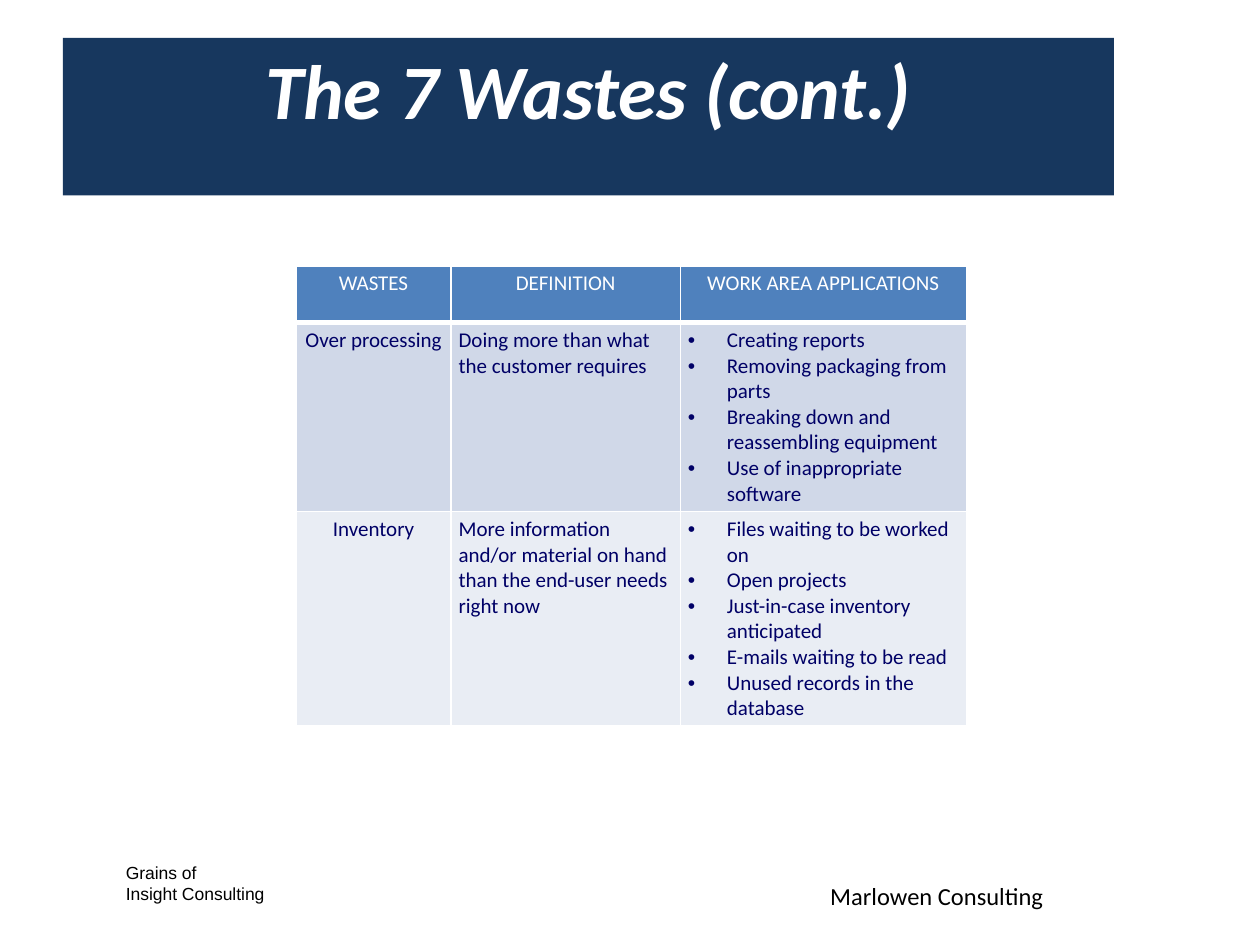
"""Build the slide on the seven wastes, with a banner, a table and two footers."""
from lxml import etree
from pptx import Presentation
from pptx import util as u
from pptx.dml.color import RGBColor
from pptx.enum import shapes, text
from pptx.oxml.ns import qn


def color(value):
    return RGBColor.from_string(value)


def write(frame, content, size=12, font="Calibri", ink="000000", bold=False,
          italic=False, align=text.PP_ALIGN.LEFT, bullet=False):
    frame.word_wrap = True
    for index, line in enumerate(content.split("\n")):
        para = frame.paragraphs[0] if index == 0 else frame.add_paragraph()
        para.alignment = align
        if bullet:
            properties = para._p.get_or_add_pPr()
            properties.set("marL", str(u.Inches(0.31)))
            properties.set("indent", str(u.Inches(-0.31)))
            etree.SubElement(properties, qn("a:buFont"), typeface="Arial")
            etree.SubElement(properties, qn("a:buChar"), char="•")
        span = para.add_run()
        span.text = line
        span.font.size = u.Pt(size)
        span.font.name = font
        span.font.bold = bold
        span.font.italic = italic
        span.font.color.rgb = color(ink)


deck = Presentation()
deck.slide_width, deck.slide_height = u.Inches(10), u.Inches(7.5)
page = deck.slides.add_slide(deck.slide_layouts[6])

footers = [
    ("Grains of\nInsight Consulting", 0.9, 6.79, 2.35, 0.44, 10, "Arial"),
    ("Marlowen Consulting", 6.49, 6.94, 2.92, 0.23, 14, "Calibri"),
]
for content, left, top, width, height, size, font in footers:
    box = page.shapes.add_textbox(
        u.Inches(left), u.Inches(top), u.Inches(width), u.Inches(height))
    write(box.text_frame, content, size=size, font=font)

banner = page.shapes.add_shape(
    shapes.MSO_SHAPE.RECTANGLE,
    u.Inches(0.5), u.Inches(0.3), u.Inches(8.34), u.Inches(1.25))
banner.shadow.inherit = False
banner.fill.solid()
banner.fill.fore_color.rgb = color("17375E")
banner.line.fill.background()
title = banner.text_frame
title.vertical_anchor = text.MSO_ANCHOR.TOP
title.margin_left = title.margin_right = u.Inches(0.07)
title.margin_top = title.margin_bottom = u.Inches(0.04)
write(title, "The 7 Wastes (cont.)", size=44, ink="FFFFFF", bold=True,
      italic=True, align=text.PP_ALIGN.CENTER)

wastes = [
    ("WASTES", "DEFINITION", "WORK AREA APPLICATIONS"),
    ("Over processing",
     "Doing more than what the customer requires",
     "Creating reports\nRemoving packaging from parts\n"
     "Breaking down and reassembling equipment\nUse of inappropriate software"),
    ("Inventory",
     "More information and/or material on hand than the end-user needs right now",
     "Files waiting to be worked on\nOpen projects\n"
     "Just-in-case inventory anticipated\nE-mails waiting to be read\n"
     "Unused records in the database"),
]
row_heights = [0.45, 1.5, 1.7]
column_widths = [1.23, 1.82, 2.27]
row_fills = ["4F81BD", "D0D8E8", "E9EDF4"]
table = page.shapes.add_table(
    3, 3, u.Inches(2.35), u.Inches(2.11), u.Inches(5.32), u.Inches(3.65)).table
for column, width in zip(table.columns, column_widths):
    column.width = u.Inches(width)
for row, height in zip(table.rows, row_heights):
    row.height = u.Inches(height)

for row, contents in enumerate(wastes):
    header = row == 0
    for column, content in enumerate(contents):
        cell = table.cell(row, column)
        cell.margin_left = cell.margin_right = u.Inches(0.06)
        cell.margin_top = cell.margin_bottom = u.Inches(0.04)
        for side in "LRTB":
            weight = 3 if header and side == "B" else 1
            border = etree.SubElement(
                cell._tc.get_or_add_tcPr(), qn(f"a:ln{side}"), w=str(u.Pt(weight)))
            paint = etree.SubElement(border, qn("a:solidFill"))
            etree.SubElement(paint, qn("a:srgbClr"), val="FFFFFF")
        cell.fill.solid()
        cell.fill.fore_color.rgb = color(row_fills[row])
        centered = header or column == 0
        write(cell.text_frame, content, ink="FFFFFF" if header else "000066",
              align=text.PP_ALIGN.CENTER if centered else text.PP_ALIGN.LEFT,
              bullet=not header and column == 2)

deck.save("out.pptx")
